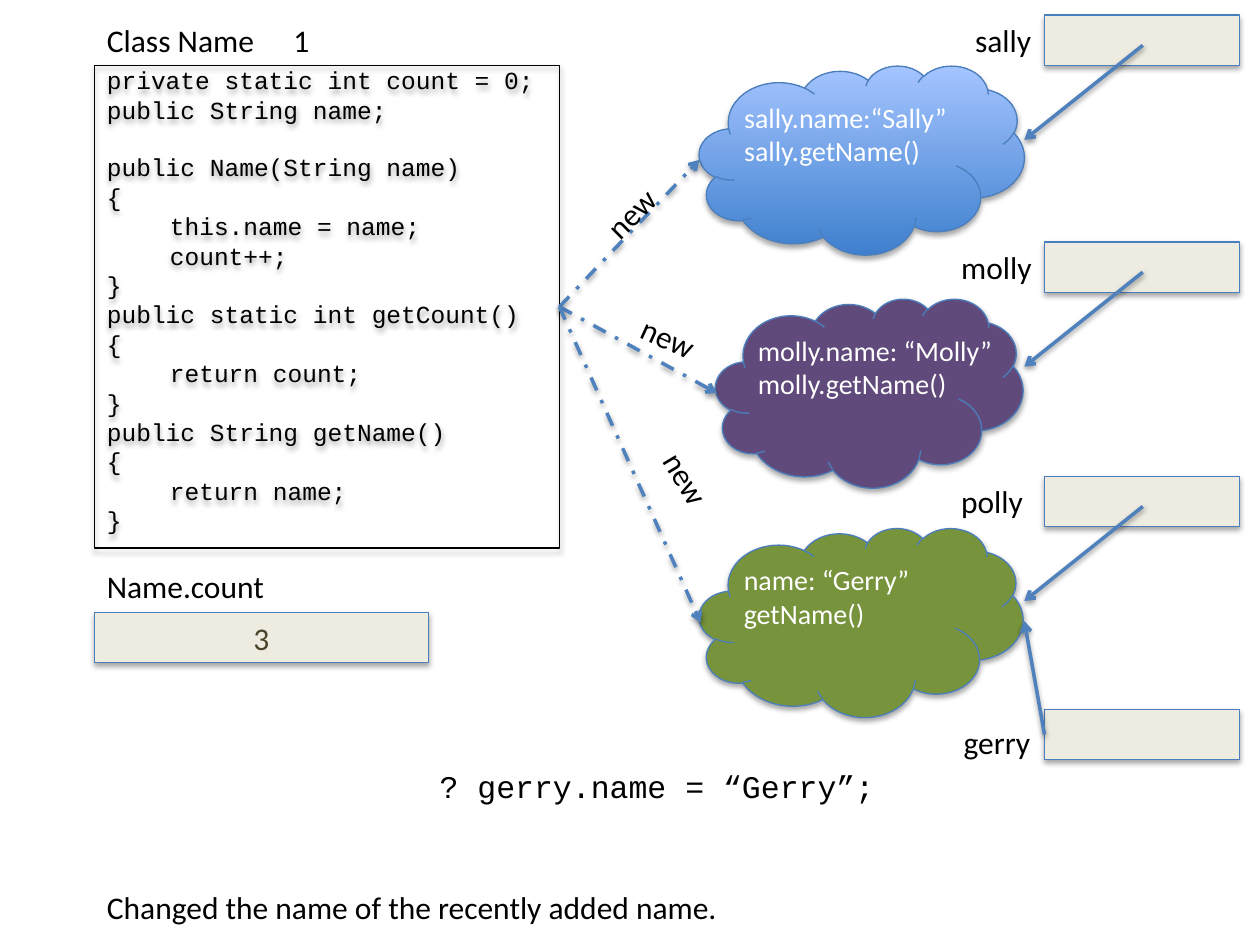
from lxml import etree
from pptx import Presentation
from pptx.dml.color import RGBColor
from pptx.enum.dml import MSO_LINE_DASH_STYLE as Dash
from pptx.enum.shapes import MSO_CONNECTOR as Connector, MSO_SHAPE as Shape
from pptx.enum.text import MSO_ANCHOR as Anchor, MSO_AUTO_SIZE as AutoSize, PP_ALIGN as Align
from pptx.oxml import parse_xml
from pptx.oxml.ns import nsdecls, qn
from pptx.util import Pt

PX = 9144
BLACK = RGBColor(0x00, 0x00, 0x00)
WHITE = RGBColor(0xFF, 0xFF, 0xFF)
CREAM = RGBColor(0xEE, 0xEC, 0xE1)
OLIVE = RGBColor(0x4A, 0x45, 0x2A)
OUTLINE = RGBColor(0x4B, 0x7E, 0xBC)
ARROW = RGBColor(0x4F, 0x81, 0xBD)
PURPLE = RGBColor(0x60, 0x4A, 0x7B)
GREEN = RGBColor(0x77, 0x93, 0x3C)
DEEP_BLUE = RGBColor(0x3F, 0x80, 0xCE)
LIGHT_BLUE = RGBColor(0xA4, 0xC4, 0xFF)

CODE = """private static int count = 0;
public String name;
public Name(String name)
{
\tthis.name = name;
\tcount++;
}
public static int getCount()
{
\treturn count;
}
public String getName()
{
\treturn name;
}"""
CONSTRUCTOR_LINE = 2

CLOUDS = [
    ((555, 52, 258, 150), [DEEP_BLUE, LIGHT_BLUE], "sally.name:“Sally”\nsally.getName()", True),
    ((568, 237, 244, 150), [PURPLE], "molly.name: “Molly”\nmolly.getName()", False),
    ((555, 419, 257, 150), [GREEN], "name: “Gerry”\ngetName()", False),
]
NEW_ARROWS = [
    ((555, 127), (469, 149, 64, 40), 315.2),
    ((569, 312), (499, 248, 64, 40), 24.5),
    ((556, 494), (513, 360, 64, 40), 59.1),
]
VARIABLES = [("sally", 12, 764, 65), ("molly", 192, 753, 77), ("polly", 378, 753, 70)]


def emu(*lengths):
    return [round(length * PX) for length in lengths]


def add_shadow(shape, distance, opacity):
    shape._element.spPr.append(parse_xml(
        f'<a:effectLst {nsdecls("a")}><a:outerShdw blurRad="40000" dist="{distance}" '
        'dir="5400000" rotWithShape="0"><a:srgbClr val="000000">'
        f'<a:alpha val="{opacity}"/></a:srgbClr></a:outerShdw></a:effectLst>'))


def set_text(shape, text, size, color, font="Calibri", align=Align.LEFT):
    shape.text_frame.text = text
    for paragraph in shape.text_frame.paragraphs:
        paragraph.alignment = align
        paragraph.font.size = Pt(size)
        paragraph.font.name = font
        paragraph.font.color.rgb = color


def set_margins(frame, horizontal, vertical):
    frame.margin_left = frame.margin_right = horizontal * PX
    frame.margin_top = frame.margin_bottom = vertical * PX


def add_block(slide, kind, box, colors, line=OUTLINE):
    shape = slide.shapes.add_shape(kind, *emu(*box))
    if not colors:
        shape.fill.background()
    elif len(colors) == 1:
        shape.fill.solid()
        shape.fill.fore_color.rgb = colors[0]
    else:
        shape.fill.gradient()
        shape.fill.gradient_angle = 90
        for stop, color in zip(shape.fill.gradient_stops, colors):
            stop.color.rgb = color
    shape.line.color.rgb = line
    shape.line.width = Pt(0.75)
    add_shadow(shape, 23000, 35000)
    return shape


def add_label(slide, box, text, font="Calibri", rotation=0):
    label = slide.shapes.add_textbox(*emu(*box))
    label.text_frame.word_wrap = False
    label.text_frame.auto_size = AutoSize.SHAPE_TO_FIT_TEXT
    set_text(label, text, 18, BLACK, font)
    label.rotation = rotation


def add_arrow(slide, start, end, dash=None):
    arrow = slide.shapes.add_connector(Connector.STRAIGHT, *emu(*start, *end))
    arrow.line.color.rgb = ARROW
    arrow.line.width = Pt(2)
    if dash is not None:
        arrow.line.dash_style = dash
    etree.SubElement(arrow.line._get_or_add_ln(), qn("a:tailEnd"), type="arrow")
    add_shadow(arrow, 20000, 38000)
    return arrow


def add_class(slide, box):
    left, top, width, height = box
    add_label(slide, (left, top - 40, 138, 40), "Class Name")
    add_label(slide, (left + 148, top - 40, 33, 40), "1")
    code = add_block(slide, Shape.RECTANGLE, box, [], BLACK)
    frame = code.text_frame
    frame.vertical_anchor = Anchor.TOP
    set_margins(frame, 10, 0)
    set_text(code, CODE, 14, BLACK, "Courier New")
    for paragraph in frame.paragraphs:
        paragraph._p.get_or_add_pPr().set("defTabSz", str(50 * PX))
    frame.paragraphs[CONSTRUCTOR_LINE].space_before = Pt(16)
    return code


def add_counter(slide, box):
    left, top, width, height = box
    add_label(slide, (left, top - 41, 146, 40), "Name.count")
    counter = add_block(slide, Shape.RECTANGLE, box, [CREAM])
    counter.text_frame.vertical_anchor = Anchor.MIDDLE
    set_text(counter, "3", 18, OLIVE, align=Align.CENTER)


def add_cloud(slide, box, colors, text, wrap):
    cloud = add_block(slide, Shape.CLOUD, box, colors)
    frame = cloud.text_frame
    frame.word_wrap = wrap
    frame.vertical_anchor = Anchor.TOP
    set_margins(frame, 0, 5)
    set_text(cloud, text, 16, WHITE)


def add_variable(slide, box, name, label_box):
    add_label(slide, label_box, name)
    return add_block(slide, Shape.RECTANGLE, box, [CREAM])


def main():
    presentation = Presentation()
    presentation.slide_width, presentation.slide_height = emu(1000, 750)
    slide = presentation.slides.add_slide(presentation.slide_layouts[6])

    code = add_class(slide, (75, 52, 369, 383))
    for cloud in CLOUDS:
        add_cloud(slide, *cloud)
    for end, label_box, rotation in NEW_ARROWS:
        arrow = add_arrow(slide, (444, 243), end, Dash.DASH_DOT)
        arrow.begin_connect(code, 3)
        add_label(slide, label_box, "new", rotation=rotation)
    add_counter(slide, (75, 486, 265, 40))

    for name, top, label_left, label_width in VARIABLES:
        add_variable(slide, (829, top, 155, 40), name, (label_left, top, label_width, 40))
        add_arrow(slide, (907, top + 24), (813, top + 99))
    gerry = add_variable(slide, (829, 563, 155, 40), "gerry", (755, 569, 74, 40))
    add_arrow(slide, (829, 583), (813, 493)).begin_connect(gerry, 1)

    add_label(slide, (339, 604, 369, 40), "? gerry.name = “Gerry”;", "Courier New")
    add_label(slide, (75, 700, 509, 40), "Changed the name of the recently added name.")
    presentation.save("out.pptx")


if __name__ == "__main__":
    main()
